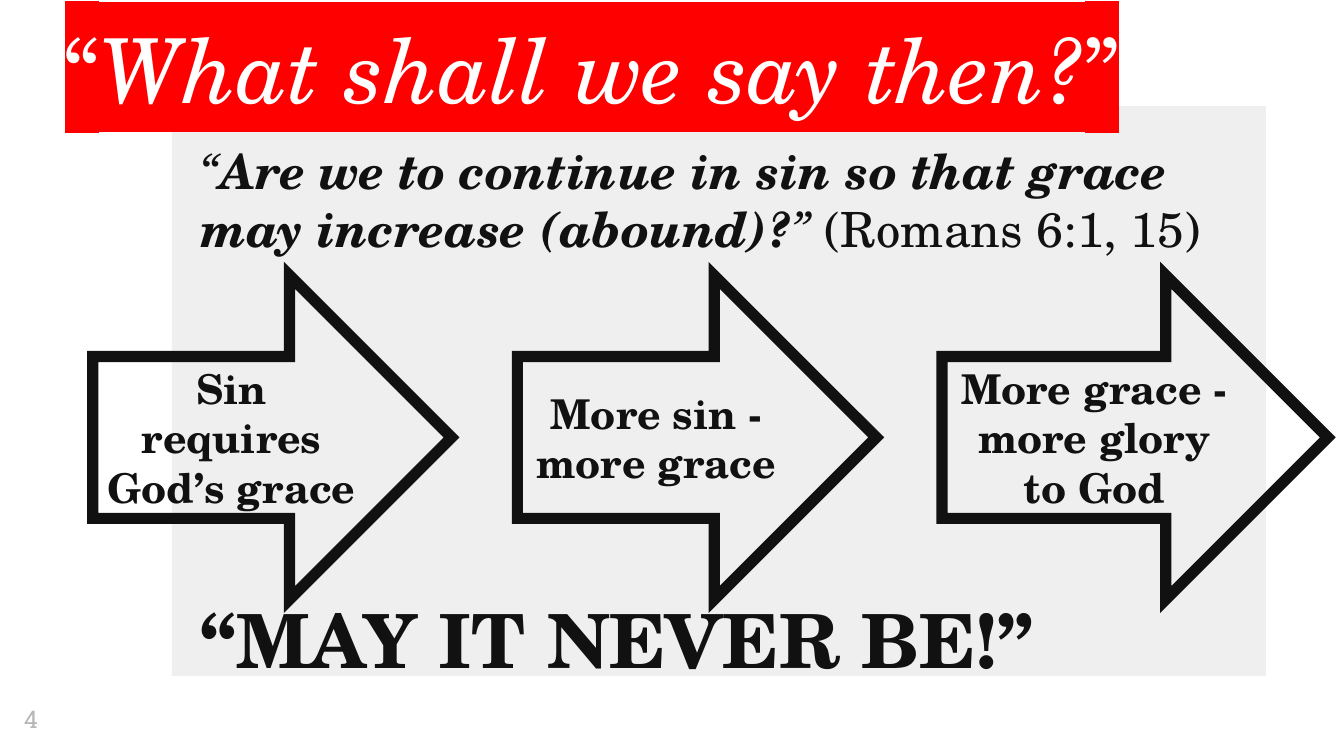
from dataclasses import dataclass

from lxml import etree
from pptx import Presentation
from pptx.dml.color import RGBColor
from pptx.enum.shapes import MSO_SHAPE
from pptx.enum.text import MSO_ANCHOR, MSO_AUTO_SIZE, PP_ALIGN
from pptx.oxml.ns import qn
from pptx.util import Inches, Pt

RECTANGLE, ARROW = MSO_SHAPE.RECTANGLE, MSO_SHAPE.RIGHT_ARROW
TOP, MIDDLE = MSO_ANCHOR.TOP, MSO_ANCHOR.MIDDLE
LEFT, CENTER = PP_ALIGN.LEFT, PP_ALIGN.CENTER
NO_FIT = MSO_AUTO_SIZE.NONE


@dataclass(frozen=True)
class Theme:
    serif: str = "TeX Gyre Schola"
    slab: str = "Roboto Slab"
    ink: str = "111111"
    panel: str = "EFEFEF"
    white: str = "FFFFFF"
    banner: str = "FF0000"
    muted: str = "B7B7B7"
    title: int = 48
    answer: int = 40
    verse: int = 26
    step: int = 22
    number: int = 13
    outline: int = 6


THEME = Theme()
WIDTH = 10
HEIGHT = WIDTH * 9 / 16
FIRST_COLUMN, COLUMN_PITCH = 0.69, 3.16
ARROW_TOP, ARROW_HEIGHT = 2.05, 2.41
STEPS = [
    ("Sin requires God’s grace", 2.67),
    ("More sin - more grace", 2.67),
    ("More grace - more glory to God", 2.87),
]


def box(left, top, width, height):
    return [Inches(length) for length in (left, top, width, height)]


def add_text(paragraph, text, size, color=THEME.ink, font=THEME.serif,
             bold=False, italic=False, highlight=None):
    run = paragraph.add_run()
    run.text = text
    run.font.size = Pt(size)
    run.font.bold = bold
    run.font.italic = italic
    run.font.color.rgb = RGBColor.from_string(color)
    if highlight:
        marker = etree.SubElement(run.font._element, qn("a:highlight"))
        etree.SubElement(marker, qn("a:srgbClr"), val=highlight)
    run.font.name = font


def prepare_frame(shape, anchor=TOP, align=LEFT):
    frame = shape.text_frame
    frame.word_wrap = True
    frame.auto_size = NO_FIT
    frame.vertical_anchor = anchor
    frame.margin_left = frame.margin_right = Inches(0.1)
    frame.margin_top = frame.margin_bottom = Inches(0.1)
    frame.paragraphs[0].alignment = align
    return frame


def place(shape, area):
    shape.left, shape.top, shape.width, shape.height = area


def format_verse(paragraph, space_before):
    paragraph.alignment = LEFT
    paragraph.space_before = Pt(space_before)
    properties = paragraph._p.get_or_add_pPr()
    properties.set("marL", str(Inches(0.08)))
    properties.set("indent", "0")
    etree.SubElement(properties, qn("a:buNone"))


def add_panel(slide):
    panel = slide.shapes.add_shape(RECTANGLE, *box(1.28, 0.79, 8.14, 4.24))
    panel.shadow.inherit = False
    panel.fill.solid()
    panel.fill.fore_color.rgb = RGBColor.from_string(THEME.panel)
    panel.line.fill.background()
    slide.shapes._spTree.insert(2, panel._element)


def fill_title(title):
    place(title, box(0.38, 0, 8.09, 0.95))
    heading = prepare_frame(title).paragraphs[0]
    for text, italic in (("“", False), ("What shall we say then?", True), ("”", False)):
        add_text(heading, text, THEME.title, color=THEME.white,
                 italic=italic, highlight=THEME.banner)


def fill_body(body):
    place(body, box(1.31, 0.95, 8.09, 4.08))
    frame = prepare_frame(body)
    question = frame.paragraphs[0]
    format_verse(question, space_before=6)
    add_text(question, "“", THEME.verse, italic=True)
    add_text(question, "Are we to continue in sin so that grace may increase (abound)?",
             THEME.verse, bold=True, italic=True)
    add_text(question, "” ", THEME.verse, italic=True)
    add_text(question, "(Romans 6:1, 15)", THEME.verse)
    answer = frame.add_paragraph()
    format_verse(answer, space_before=180)
    add_text(answer, "“MAY IT NEVER BE!”", THEME.answer, bold=True)


def add_page_number(slide):
    number = slide.shapes.add_textbox(*box(0.08, 5.14, 0.6, 0.43))
    add_text(prepare_frame(number).paragraphs[0], "4", THEME.number,
             color=THEME.muted, font=THEME.slab)


def add_step(slide, column, text, width):
    left = FIRST_COLUMN + column * COLUMN_PITCH
    step = slide.shapes.add_shape(ARROW, *box(left, ARROW_TOP, width, ARROW_HEIGHT))
    step.shadow.inherit = False
    step.fill.background()
    step.line.color.rgb = RGBColor.from_string(THEME.ink)
    step.line.width = Pt(THEME.outline)
    etree.SubElement(step.line._get_or_add_ln(), qn("a:miter"), lim="800000")
    frame = prepare_frame(step, anchor=MIDDLE, align=CENTER)
    add_text(frame.paragraphs[0], text, THEME.step, bold=True)


def main():
    deck = Presentation()
    deck.slide_width, deck.slide_height = Inches(WIDTH), Inches(HEIGHT)
    slide = deck.slides.add_slide(deck.slide_layouts[1])
    add_panel(slide)
    fill_title(slide.shapes.title)
    fill_body(slide.placeholders[1])
    add_page_number(slide)
    for column, (text, width) in enumerate(STEPS):
        add_step(slide, column, text, width)
    deck.save("out.pptx")


if __name__ == "__main__":
    main()
